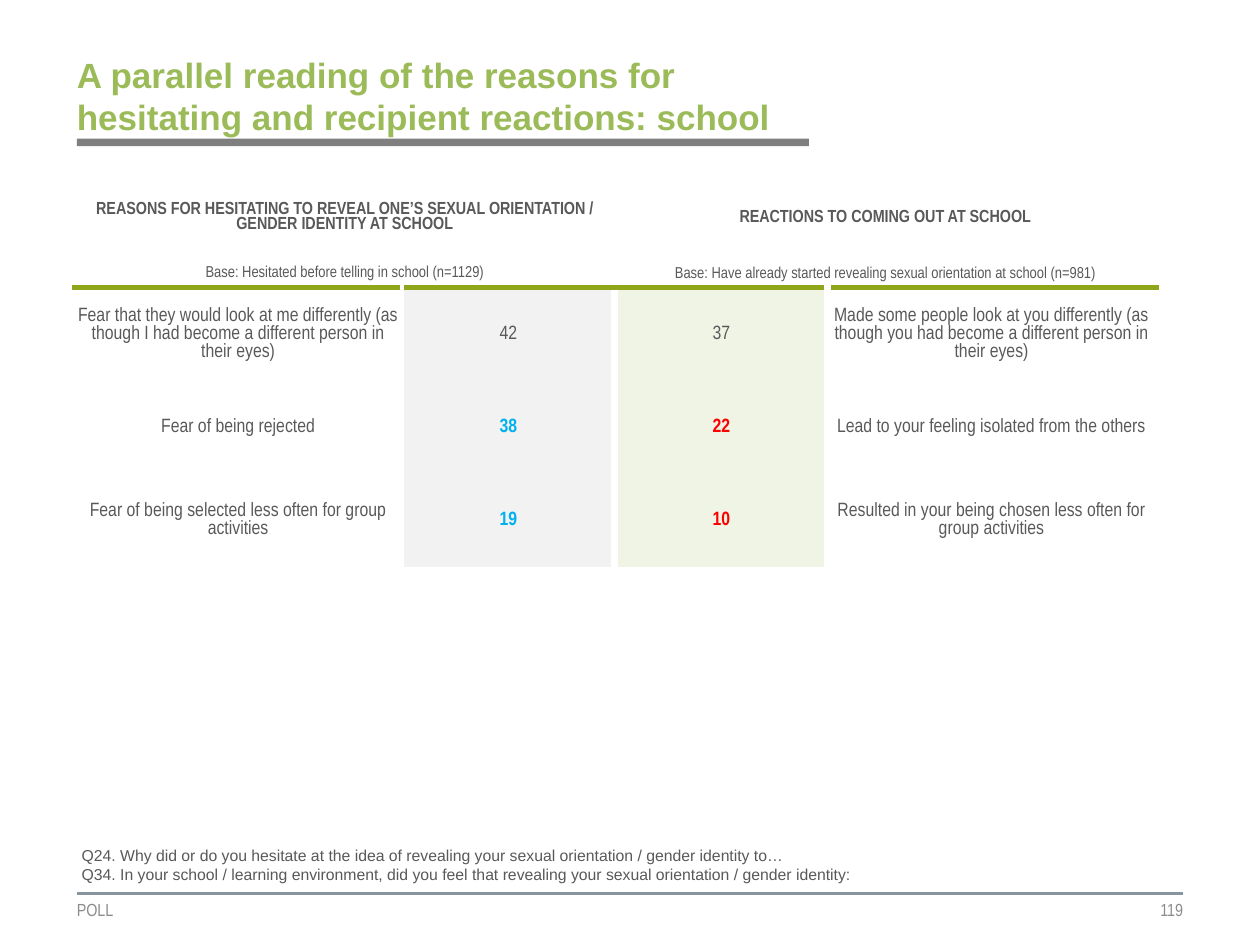
from lxml import etree
from pptx import Presentation
from pptx.dml.color import RGBColor
from pptx.enum.shapes import MSO_CONNECTOR, MSO_SHAPE
from pptx.enum.text import MSO_ANCHOR, MSO_AUTO_SIZE, PP_ALIGN
from pptx.oxml.ns import qn
from pptx.util import Inches, Pt

LEFT, MID, RIGHT = PP_ALIGN.LEFT, PP_ALIGN.CENTER, PP_ALIGN.RIGHT
CENTER, TOP = MSO_ANCHOR.MIDDLE, MSO_ANCHOR.TOP
NARROW = "Arial Narrow"
GREY, BLUE, RED, PALE = "595959", "00B0F0", "FF0000", "8C8C8C"
WHITE, GREEN = "FFFFFF", "91A51B"

TITLE = "A parallel reading of the reasons for hesitating and recipient reactions: school"
HEADS = ["REASONS FOR HESITATING TO REVEAL ONE’S SEXUAL ORIENTATION / GENDER IDENTITY AT SCHOOL",
         "REACTIONS TO COMING OUT AT SCHOOL"]
BASES = ["Base: Hesitated before telling in school (n=1129)",
         "Base: Have already started revealing sexual orientation at school (n=981)"]
ROWS = [
    ("Fear that they would look at me differently (as though I had become a different person in their eyes)",
     "42", "37",
     "Made some people look at you differently (as though you had become a different person in their eyes)"),
    ("Fear of being rejected", "38", "22", "Lead to your feeling isolated from the others"),
    ("Fear of being selected less often for group activities", "19", "10",
     "Resulted in your being chosen less often for group activities"),
]
NOTES = ["Q24. Why did or do you hesitate at the idea of revealing your sexual orientation / gender identity to…",
         "Q34. In your school / learning environment, did you feel that revealing your sexual orientation / gender identity:"]
FIRM, PAGE = "POLL", "119"

WIDTHS = [2.6, 1.69, 1.69, 2.6]
HEIGHTS = [0.67, 0.22, 0.74, 0.74, 0.74]
EDGES = [3, 3, 4.5, 4.5, 0]
FILLS = [None, "F2F2F2", "EFF4E4", WHITE]
MARKS = [GREY, BLUE, RED, GREY]


def rgb(code):
    return RGBColor.from_string(code)


def write(frame, *lines, size=10, font=NARROW, color=GREY, bold=False, align=LEFT, space=None):
    for i, line in enumerate(lines):
        para = frame.paragraphs[0] if i == 0 else frame.add_paragraph()
        para.alignment = align
        para.line_spacing = space
        run = para.add_run()
        run.text = line
        run.font.size, run.font.name, run.font.bold = Pt(size), font, bold
        run.font.color.rgb = rgb(color)


def place(shape, *box):
    shape.left, shape.top, shape.width, shape.height = map(Inches, box)


def setup(frame, anchor=CENTER, pad=(0, 0)):
    """Wrap the text; pad is the side and the top margin."""
    frame.word_wrap = True
    frame.auto_size = MSO_AUTO_SIZE.NONE
    frame.vertical_anchor = anchor
    frame.margin_left = frame.margin_right = Inches(pad[0])
    frame.margin_top = frame.margin_bottom = Inches(pad[1])
    return frame


def box(slide, *area, **form):
    return setup(slide.shapes.add_textbox(*map(Inches, area)).text_frame, **form)


def border(cell, side, width, color):
    line = etree.SubElement(cell._tc.get_or_add_tcPr(), qn("a:ln" + side), w=str(Pt(width)))
    if width:
        fill = etree.SubElement(line, qn("a:solidFill"))
        etree.SubElement(fill, qn("a:srgbClr"), val=color)
    else:
        etree.SubElement(line, qn("a:noFill"))


def style(cell, row, col):
    border(cell, "L", EDGES[col], WHITE)
    border(cell, "R", EDGES[col + 1], WHITE)
    border(cell, "T", 3 if row == 2 else 0, GREEN)
    border(cell, "B", 3 if row == 1 else 0, GREEN)
    if row > 1 and FILLS[col]:
        cell.fill.solid()
        cell.fill.fore_color.rgb = rgb(FILLS[col])
    else:
        cell.fill.background()
    cell.vertical_anchor = CENTER
    first = row < 2 and col == 0
    cell.margin_left = cell.margin_right = Inches(0 if first else 0.01)
    cell.margin_top = Inches(0.05 if first else 0.01)
    cell.margin_bottom = Inches(0.05 if first else 0)


def grid(slide):
    table = slide.shapes.add_table(len(HEIGHTS), len(WIDTHS), Inches(0.59), Inches(1.39),
                                   Inches(sum(WIDTHS)), Inches(sum(HEIGHTS))).table
    table.first_row = table.horz_banding = False
    for col, wide in zip(table.columns, WIDTHS):
        col.width = Inches(wide)
    for r, tall in enumerate(HEIGHTS):
        table.rows[r].height = Inches(tall)
        for c in range(len(WIDTHS)):
            style(table.cell(r, c), r, c)
    for r, (texts, size) in enumerate([(HEADS, 10), (BASES, 9)]):
        for i, text in enumerate(texts):
            cell = table.cell(r, 2 * i)
            cell.merge(table.cell(r, 2 * i + 1))
            write(cell.text_frame, text, size=size, bold=r == 0, align=MID,
                  space=0.95 if r == i == 0 else None)
    for r, texts in enumerate(ROWS):
        for c, text in enumerate(texts):
            color = MARKS[c] if r else GREY
            write(table.cell(r + 2, c).text_frame, text, size=11, color=color,
                  bold=color != GREY, align=MID)


def main():
    deck = Presentation()
    deck.slide_width, deck.slide_height = Inches(10), Inches(7.5)
    slide = deck.slides.add_slide(deck.slide_layouts[5])

    rule = slide.shapes.add_connector(MSO_CONNECTOR.STRAIGHT, Inches(0.61), Inches(7.09),
                                      Inches(9.39), Inches(7.09))
    rule.line.color.rgb = rgb("88959E")
    rule.line.width = Pt(1.5)
    etree.SubElement(rule._element.spPr, qn("a:effectLst"))

    bar = slide.shapes.add_shape(MSO_SHAPE.RECTANGLE, 0, 0, 0, 0)
    place(bar, 0.61, 1.1, 5.81, 0.06)
    bar.shadow.inherit = False
    bar.fill.solid()
    bar.fill.fore_color.rgb = rgb("7F7F7F")
    bar.line.fill.background()

    title = slide.shapes.title
    place(title, 0.61, 0.41, 5.81, 0.69)
    write(setup(title.text_frame), TITLE, size=20, font="Arial", color="9BBB59", bold=True)

    write(box(slide, 0.61, 7.09, 2.8, 0.26), FIRM, color=PALE)
    write(box(slide, 6.55, 7.09, 2.84, 0.26), PAGE, color=PALE, align=RIGHT)
    grid(slide)
    write(box(slide, 0.55, 6.66, 8.86, 0.4, anchor=TOP, pad=(0.1, 0.05)), *NOTES,
          size=9, font="Arial")
    deck.save("out.pptx")


if __name__ == "__main__":
    main()
